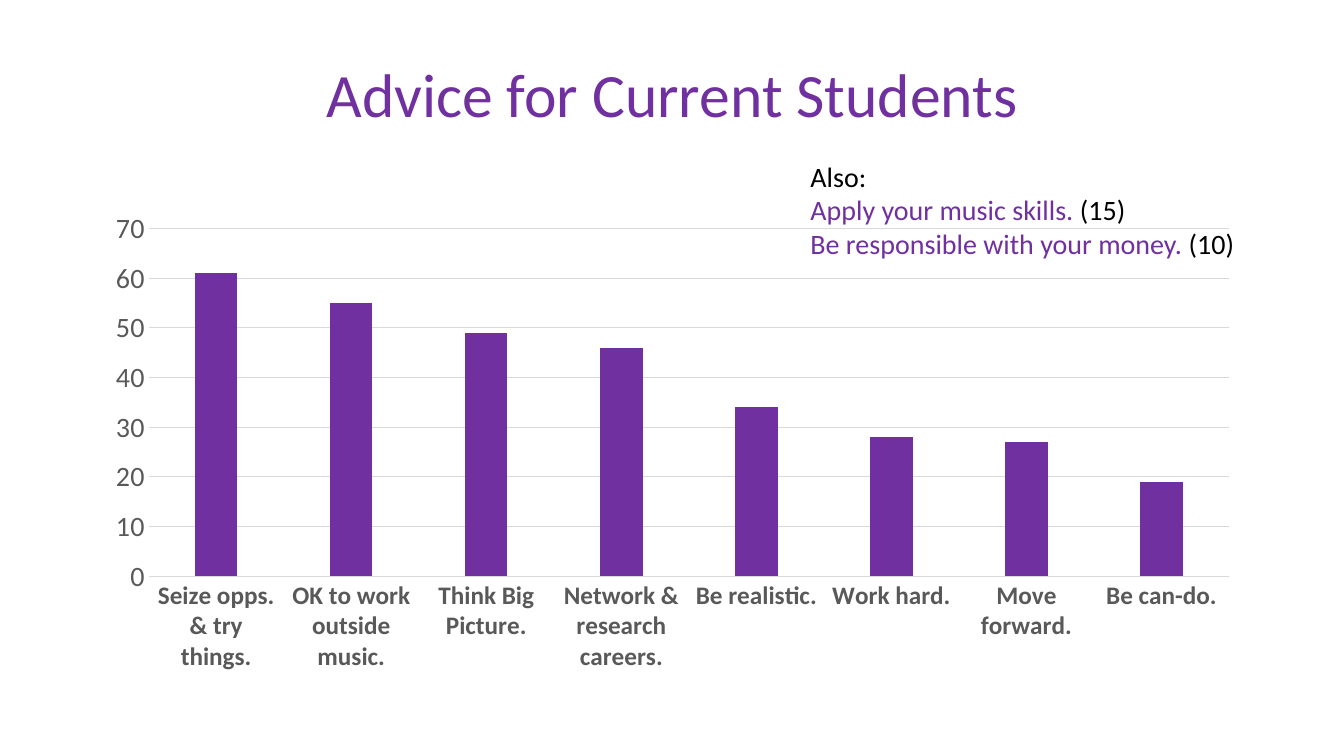
from dataclasses import dataclass

from pptx import Presentation
from pptx.chart.data import CategoryChartData
from pptx.dml.color import RGBColor
from pptx.enum.chart import XL_CHART_TYPE as ChartType, XL_TICK_MARK as Tick
from pptx.enum.text import MSO_ANCHOR as Anchor, PP_ALIGN as Align
from pptx.slide import Slide
from pptx.text.text import Font
from pptx.util import Inches, Pt

PURPLE = RGBColor(0x70, 0x30, 0xA0)
BLACK = RGBColor(0, 0, 0)
GREY = RGBColor(0x59, 0x59, 0x59)
PALE = RGBColor(0xD9, 0xD9, 0xD9)
FACE = "Calibri"


@dataclass
class Run:
    text: str
    color: RGBColor


@dataclass
class Box:
    left: float
    top: float
    width: float
    height: float
    size: int
    lines: list[list[Run]]
    frame: dict
    para: dict


# Text and data
BOXES = [
    Box(0.92, 0.4, 11.5, 1.13, 44, [[Run("Advice for Current Students", PURPLE)]],
        {"vertical_anchor": Anchor.MIDDLE},
        {"alignment": Align.CENTER, "line_spacing": 0.9}),
    Box(7.94, 1.53, 4.76, 1.11, 20,
        [[Run("Also:", BLACK)],
         [Run("Apply your music skills. ", PURPLE), Run("(15)", BLACK)],
         [Run("Be responsible with your money. ", PURPLE), Run("(10)", BLACK)]],
        {"vertical_anchor": Anchor.TOP}, {"alignment": Align.LEFT}),
]
ADVICE = {
    "Seize opps. & try things.": 61,
    "OK to work outside music.": 55,
    "Think Big Picture.": 49,
    "Network & research careers.": 46,
    "Be realistic.": 34,
    "Work hard.": 28,
    "Move forward.": 27,
    "Be can-do.": 19,
}


def apply(item: object, values: dict) -> None:
    for name, value in values.items():
        setattr(item, name, value)


def style(font: Font, size: int, color: RGBColor, bold: bool = False) -> None:
    apply(font, {"name": FACE, "size": Pt(size), "bold": bold})
    font.color.rgb = color


def add_box(slide: Slide, box: Box) -> None:
    place = map(Inches, (box.left, box.top, box.width, box.height))
    frame = slide.shapes.add_textbox(*place).text_frame
    apply(frame, {"word_wrap": True, **box.frame})
    for i, line in enumerate(box.lines):
        para = frame.add_paragraph() if i else frame.paragraphs[0]
        apply(para, box.para)
        for part in line:
            run = para.add_run()
            run.text = part.text
            style(run.font, box.size, part.color)


def add_bars(slide: Slide) -> None:
    data = CategoryChartData()
    data.categories = list(ADVICE)
    data.add_series("Series 1", list(ADVICE.values()))
    place = map(Inches, (0.92, 2, 11.5, 4.76))
    chart = slide.shapes.add_chart(ChartType.COLUMN_CLUSTERED, *place, data).chart
    apply(chart, {"has_legend": False, "has_title": False})
    style(chart.font, 10, BLACK)

    # Columns
    plot = chart.plots[0]
    apply(plot, {"gap_width": 219, "overlap": -27, "vary_by_categories": False})
    fill = plot.series[0].format.fill
    fill.solid()
    fill.fore_color.rgb = PURPLE

    # Axes and grid
    cats, vals = chart.category_axis, chart.value_axis
    for axis, size, bold in ((cats, 18, True), (vals, 20, False)):
        apply(axis, {"major_tick_mark": Tick.NONE, "minor_tick_mark": Tick.NONE})
        style(axis.tick_labels.font, size, GREY, bold)
    apply(vals, {"minimum_scale": 0, "maximum_scale": 70, "major_unit": 10,
                 "has_major_gridlines": True})
    vals.format.line.fill.background()
    for line in (cats.format.line, vals.major_gridlines.format.line):
        line.color.rgb = PALE
        line.width = Pt(0.75)


def main() -> None:
    deck = Presentation()
    apply(deck, {"slide_width": Inches(13.33), "slide_height": Inches(7.5)})
    slide = deck.slides.add_slide(deck.slide_layouts[6])
    title, note = BOXES
    add_box(slide, title)
    add_bars(slide)
    add_box(slide, note)
    deck.save("out.pptx")


if __name__ == "__main__":
    main()
